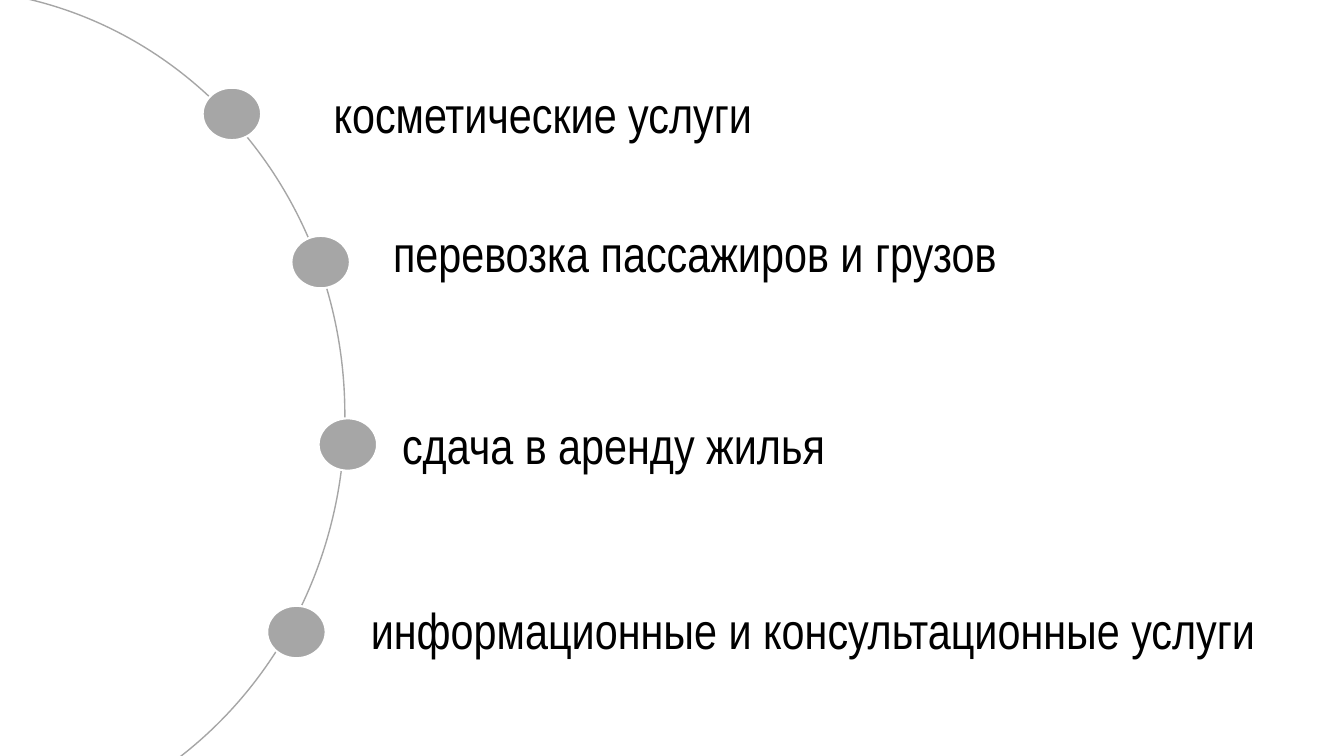
"""Builds a slide listing four services along a large arc."""

import dataclasses

import pptx
import pptx.dml.color
import pptx.enum.shapes
import pptx.enum.text
import pptx.shapes.autoshape
import pptx.shapes.shapetree
import pptx.slide
import pptx.util

EMU_PER_PX = 9144
GREY = "A6A6A6"
WHITE = "FFFFFF"
BLACK = "000000"
DOT_WIDTH, DOT_HEIGHT = 58, 52
LABEL_HEIGHT = 71


@dataclasses.dataclass(frozen=True)
class Service:
    text: str
    label_left: int
    label_top: int
    label_width: int
    dot_left: int
    dot_top: int


SERVICES = [
    Service("косметические услуги", 321, 78, 447, 201, 87),
    Service("перевозка пассажиров и грузов", 380, 215, 633, 289, 234),
    Service("сдача в аренду жилья", 389, 406, 454, 316, 415),
    Service("информационные и консультационные услуги", 358, 589, 918, 265, 601),
]


def px(length: int) -> pptx.util.Emu:
    return pptx.util.Emu(length * EMU_PER_PX)


def color(value: str) -> pptx.dml.color.RGBColor:
    return pptx.dml.color.RGBColor.from_string(value)


def add_ellipse(
    shapes: pptx.shapes.shapetree.GroupShapes,
    left: int,
    top: int,
    width: int,
    height: int,
    *,
    line: str,
    line_width: float,
    fill: str | None = None,
) -> pptx.shapes.autoshape.Shape:
    shape = shapes.add_shape(
        pptx.enum.shapes.MSO_SHAPE.OVAL, px(left), px(top), px(width), px(height)
    )
    shape.shadow.inherit = False
    if fill is None:
        shape.fill.background()
    else:
        shape.fill.solid()
        shape.fill.fore_color.rgb = color(fill)
    shape.line.color.rgb = color(line)
    shape.line.width = pptx.util.Pt(line_width)
    return shape


def add_text(
    slide: pptx.slide.Slide,
    text: str,
    *,
    left: int,
    top: int,
    width: int,
    height: int = LABEL_HEIGHT,
    size: int = 36,
    font: str = "Arial Narrow",
    font_color: str = BLACK,
) -> pptx.shapes.autoshape.Shape:
    shape = slide.shapes.add_textbox(px(left), px(top), px(width), px(height))
    frame = shape.text_frame
    frame.word_wrap = False
    frame.auto_size = pptx.enum.text.MSO_AUTO_SIZE.SHAPE_TO_FIT_TEXT
    run = frame.paragraphs[0].add_run()
    run.text = text
    run.font.size = pptx.util.Pt(size)
    run.font.name = font
    run.font.color.rgb = color(font_color)
    return shape


def main() -> None:
    presentation = pptx.Presentation()
    presentation.slide_width = px(1333)
    presentation.slide_height = px(750)
    blank_layout = presentation.slide_layouts.get_by_name("Blank")
    slide = presentation.slides.add_slide(blank_layout)

    arc = slide.shapes.add_group_shape()
    add_ellipse(arc.shapes, -461, -11, 803, 844, line=GREY, line_width=1)
    for service in SERVICES:
        add_ellipse(
            arc.shapes,
            service.dot_left,
            service.dot_top,
            DOT_WIDTH,
            DOT_HEIGHT,
            fill=GREY,
            line=WHITE,
            line_width=1.5,
        )
        add_text(
            slide,
            service.text,
            left=service.label_left,
            top=service.label_top,
            width=service.label_width,
        )

    presentation.save("out.pptx")


if __name__ == "__main__":
    main()
